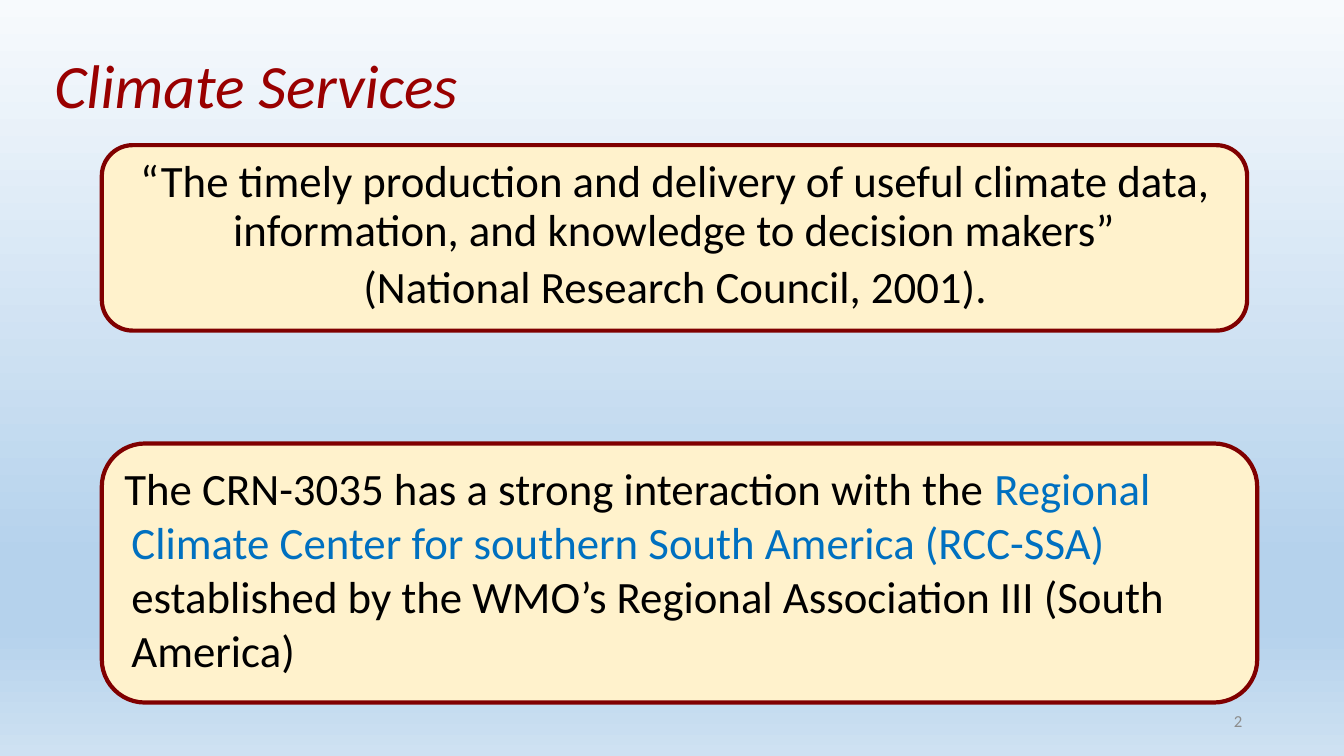
from dataclasses import dataclass
from typing import Optional

from lxml import etree
from pptx import Presentation
from pptx.dml.color import RGBColor
from pptx.enum.shapes import MSO_SHAPE
from pptx.enum.text import MSO_ANCHOR, PP_ALIGN
from pptx.oxml.ns import qn
from pptx.util import Inches, Pt

ALTERNATE_PROCESS = MSO_SHAPE.FLOWCHART_ALTERNATE_PROCESS
ROUNDED_RECTANGLE = MSO_SHAPE.ROUNDED_RECTANGLE
TOP, MIDDLE = MSO_ANCHOR.TOP, MSO_ANCHOR.MIDDLE
LEFT, CENTER, RIGHT = PP_ALIGN.LEFT, PP_ALIGN.CENTER, PP_ALIGN.RIGHT

FONT = "Calibri"
BLACK = "000000"
BLUE = "0070C0"
DARK_RED = "990000"
MAROON = "800000"
CREAM = "FFF2CC"
GRAY = "8C8C8C"
SKY = [(0, "F7FAFD"), (74, "B5D2EC"), (83, "B5D2EC"), (100, "CEE1F2")]


@dataclass
class TextRun:
    text: str
    color: str = BLACK


@dataclass
class TextBlock:
    left: float
    top: float
    width: float
    height: float
    paragraphs: list[list[TextRun]]
    size: float = 32
    italic: bool = False
    alignment: PP_ALIGN = LEFT
    anchor: MSO_ANCHOR = TOP
    margin: float = 0
    indent: float = 0
    line_spacing: float = 1
    space_before: float = 0
    preset: Optional[MSO_SHAPE] = None


BLOCKS = [
    TextBlock(0.44, 0.5, 4.43, 0.67, [[TextRun("Climate Services", DARK_RED)]],
              size=44, italic=True, margin=0.25, indent=-0.25,
              line_spacing=0.9, space_before=10),
    TextBlock(1.01, 1.44, 11.36, 1.84,
              [[TextRun("“The timely production and delivery of useful climate data, "
                        "information, and knowledge to decision makers”")],
               [TextRun("(National Research Council, 2001).")]],
              alignment=CENTER, indent=0.02, line_spacing=0.9, space_before=6.4,
              preset=ALTERNATE_PROCESS),
    TextBlock(1.01, 4.4, 11.46, 2.57,
              [[TextRun("The CRN-3035 has a strong interaction with the "),
                TextRun("Regional Climate Center for southern South America (RCC-SSA) ", BLUE),
                TextRun("established by the WMO’s Regional Association III (South America)")]],
              margin=0.07, indent=-0.07, space_before=6.4, preset=ROUNDED_RECTANGLE),
    TextBlock(9.42, 6.95, 3, 0.4, [[TextRun("2", GRAY)]],
              size=12, alignment=RIGHT, anchor=MIDDLE),
]


def rgb(color: str) -> RGBColor:
    return RGBColor.from_string(color)


def paint_background(slide, stops: list[tuple[int, str]]) -> None:
    fill = slide.background.fill
    fill.gradient()
    fill.gradient_angle = 270
    stop_list = slide._element.xpath(".//a:gsLst")[0]
    for old_stop in list(stop_list):
        stop_list.remove(old_stop)
    for position, color in stops:
        stop = etree.SubElement(stop_list, qn("a:gs"), pos=str(position * 1000))
        etree.SubElement(stop, qn("a:srgbClr"), val=color)


def add_panel(slide, preset: MSO_SHAPE, bounds: list[int]):
    shape = slide.shapes.add_shape(preset, *bounds)
    shape.shadow.inherit = False
    shape.fill.solid()
    shape.fill.fore_color.rgb = rgb(CREAM)
    shape.line.color.rgb = rgb(MAROON)
    shape.line.width = Pt(3)
    return shape


def add_block(slide, block: TextBlock) -> None:
    bounds = [Inches(length) for length in (block.left, block.top, block.width, block.height)]
    if block.preset is None:
        shape = slide.shapes.add_textbox(*bounds)
    else:
        shape = add_panel(slide, block.preset, bounds)
    text_frame = shape.text_frame
    text_frame.word_wrap = True
    text_frame.vertical_anchor = block.anchor
    for index, runs in enumerate(block.paragraphs):
        paragraph = text_frame.add_paragraph() if index else text_frame.paragraphs[0]
        paragraph.alignment = block.alignment
        paragraph.line_spacing = block.line_spacing
        paragraph.space_before = Pt(block.space_before)
        properties = paragraph._p.get_or_add_pPr()
        properties.set("marL", str(Inches(block.margin)))
        properties.set("indent", str(Inches(block.indent)))
        for text_run in runs:
            run = paragraph.add_run()
            run.text = text_run.text
            run.font.name = FONT
            run.font.size = Pt(block.size)
            run.font.italic = block.italic
            run.font.color.rgb = rgb(text_run.color)


def main() -> None:
    presentation = Presentation()
    presentation.slide_width = Inches(13.33)
    presentation.slide_height = Inches(7.5)
    slide = presentation.slides.add_slide(presentation.slide_layouts[6])
    paint_background(slide, SKY)
    for block in BLOCKS:
        add_block(slide, block)
    presentation.save("out.pptx")


if __name__ == "__main__":
    main()
